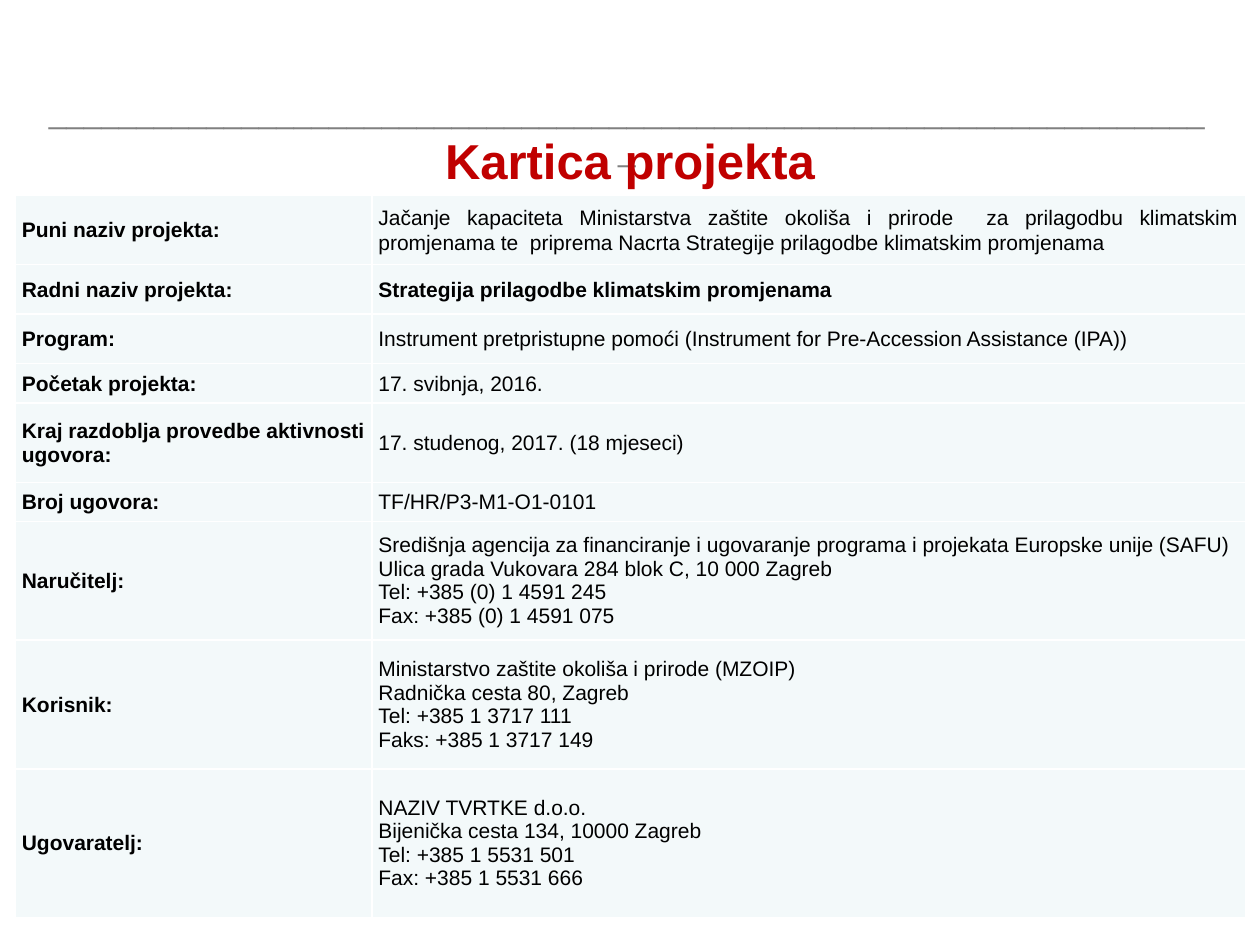
from dataclasses import dataclass

from lxml.etree import SubElement
from pptx import Presentation
from pptx.dml.color import RGBColor
from pptx.enum.text import MSO_ANCHOR as Anchor, PP_ALIGN as Align
from pptx.oxml.ns import qn
from pptx.util import Pt

RED = RGBColor(0xC0, 0x00, 0x00)
GRAY = RGBColor(0x80, 0x80, 0x80)
BLACK = RGBColor(0x00, 0x00, 0x00)
WHITE = RGBColor(0xFF, 0xFF, 0xFF)
MINT = RGBColor(0xF3, 0xF9, 0xFA)
FONT = "Arial"
SIDES = ("a:lnL", "a:lnR", "a:lnT", "a:lnB")
WIDTHS = (203.76, 498.96)


@dataclass
class Row:
    label: str
    lines: tuple[str, ...]
    height: float
    bold: bool = False
    align: Align = Align.JUSTIFY
    after: float = 0


ROWS = (
    Row("Puni naziv projekta:", (
        "Jačanje kapaciteta Ministarstva zaštite okoliša i prirode  za prilagodbu klimatskim "
        "promjenama te  priprema Nacrta Strategije prilagodbe klimatskim promjenama",), 39.6),
    Row("Radni naziv projekta:", ("Strategija prilagodbe klimatskim promjenama",), 28.3, bold=True),
    Row("Program:", (
        "Instrument pretpristupne pomoći (Instrument for Pre-Accession Assistance (IPA))",), 28.3),
    Row("Početak projekta:", ("17. svibnja, 2016.",), 22.5),
    Row("Kraj razdoblja provedbe aktivnosti ugovora:", ("17. studenog, 2017. (18 mjeseci)",), 45.4),
    Row("Broj ugovora:", ("TF/HR/P3-M1-O1-0101",), 22.4),
    Row("Naručitelj:", (
        "Središnja agencija za financiranje i ugovaranje programa i projekata Europske unije (SAFU)",
        "Ulica grada Vukovara 284 blok C, 10 000 Zagreb",
        "Tel: +385 (0) 1 4591 245\vFax: +385 (0) 1 4591 075"), 67.8, align=Align.LEFT, after=6),
    Row("Korisnik:", (
        "Ministarstvo zaštite okoliša i prirode (MZOIP)",
        "Radnička cesta 80, Zagreb",
        "Tel: +385 1 3717 111",
        "Faks: +385 1 3717 149"), 73.6),
    Row("Ugovaratelj:", (
        "NAZIV TVRTKE d.o.o.",
        "Bijenička cesta 134, 10000 Zagreb",
        "Tel: +385 1 5531 501",
        "Fax: +385 1 5531 666"), 84.8),
)


def style(para, size: float, color: RGBColor, bold: bool, align: Align) -> None:
    para.alignment = align
    for run in para.runs:
        font = run.font
        font.name, font.size, font.bold = FONT, Pt(size), bold
        font.color.rgb = color


def add_text(slide, text: str, box: tuple, size: float, color: RGBColor,
             bold: bool, anchor: Anchor) -> None:
    frame = slide.shapes.add_textbox(*map(Pt, box)).text_frame
    frame.word_wrap = True
    frame.vertical_anchor = anchor
    frame.text = text
    style(frame.paragraphs[0], size, color, bold, Align.CENTER)


def add_edges(cell) -> None:
    props = cell._tc.get_or_add_tcPr()
    for side in SIDES:
        edge = SubElement(props, qn(side), w=str(Pt(1)))
        fill = SubElement(edge, qn("a:solidFill"))
        SubElement(fill, qn("a:srgbClr"), val=str(WHITE))


def fill_cell(cell, lines: tuple[str, ...], bold: bool, align: Align, after: float = 0) -> None:
    add_edges(cell)
    cell.fill.solid()
    cell.fill.fore_color.rgb = MINT
    cell.vertical_anchor = Anchor.MIDDLE
    cell.margin_left = cell.margin_right = Pt(3.6)
    cell.margin_top = cell.margin_bottom = Pt(0)
    frame = cell.text_frame
    for i, line in enumerate(lines):
        para = frame.add_paragraph() if i else frame.paragraphs[0]
        para.text = line
        style(para, 12, BLACK, bold, align)
        if len(lines) == 1:
            para.line_spacing = Pt(14)
    if after:
        para.space_after = Pt(after)


def add_card(slide) -> None:
    height = sum(row.height for row in ROWS)
    box = (8.9, 111.6, sum(WIDTHS), height)
    table = slide.shapes.add_table(len(ROWS), len(WIDTHS), *map(Pt, box)).table
    table.first_row = table.horz_banding = False
    for col, width in zip(table.columns, WIDTHS):
        col.width = Pt(width)
    for i, row in enumerate(ROWS):
        table.rows[i].height = Pt(row.height)
        fill_cell(table.cell(i, 0), (row.label,), True, Align.LEFT)
        fill_cell(table.cell(i, 1), row.lines, row.bold, row.align, row.after)


def main() -> None:
    deck = Presentation()
    deck.slide_width, deck.slide_height = Pt(720), Pt(540)
    slide = deck.slides.add_slide(deck.slide_layouts[6])
    add_text(slide, "_" * 67, (15.84, 48.96, 684.72, 28.8), 18, GRAY, False, Anchor.TOP)
    add_text(slide, "Kartica projekta", (36, 71.3, 648, 40.3), 28, RED, True, Anchor.MIDDLE)
    add_card(slide)
    deck.save("out.pptx")


if __name__ == "__main__":
    main()
